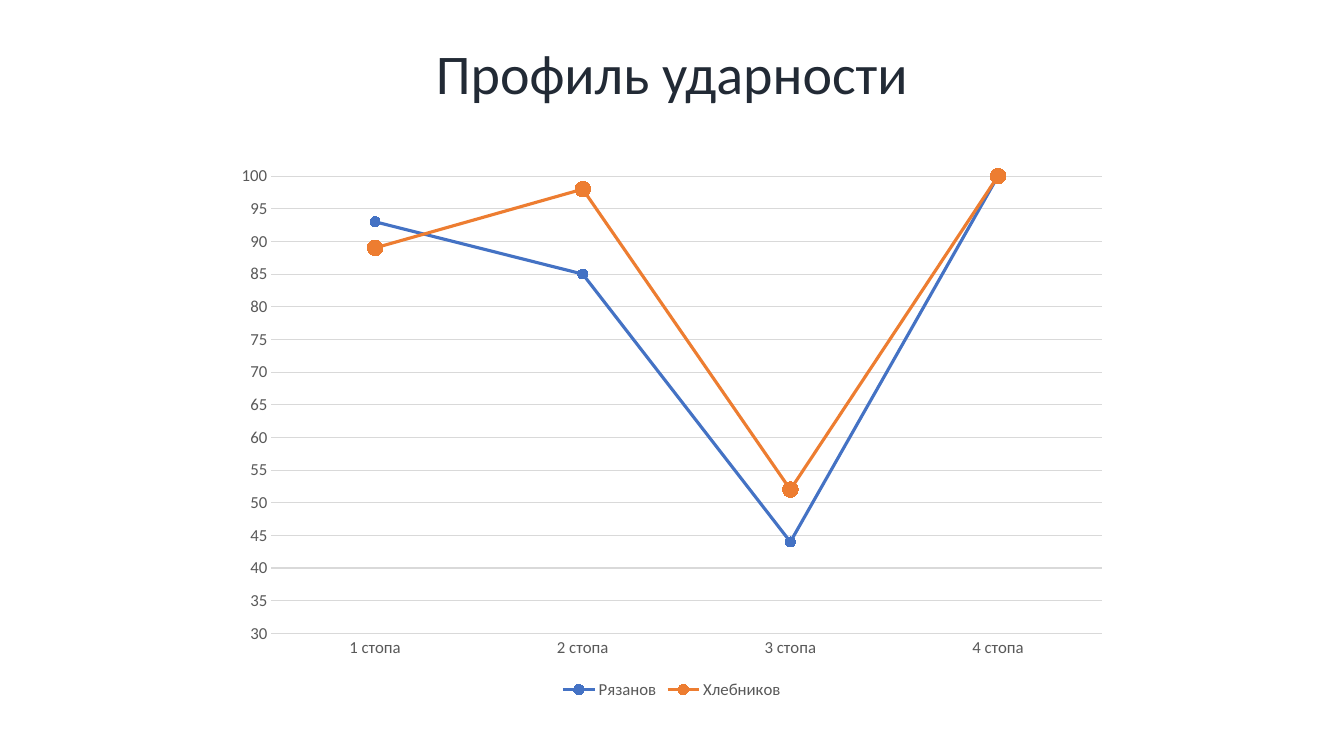
from pptx import Presentation
from pptx.chart.data import CategoryChartData
from pptx.dml.color import RGBColor
from pptx.enum import chart as kinds, text
from pptx.util import Cm, Pt

FONT = "Calibri"
COLORS = {
    "title": "222A35",
    "label": "595959",
    "grid": "D9D9D9",
    "Рязанов": "4472C4",
    "Хлебников": "ED7D31",
}
FEET = ["1 стопа", "2 стопа", "3 стопа", "4 стопа"]
# Poet: stress percentages by foot, marker size
PROFILES = {
    "Рязанов": ([93, 85, 44, 100], 7),
    "Хлебников": ([89, 98, 52, 100], 11),
}


def color(name):
    return RGBColor.from_string(COLORS[name])


def format_font(font, size, name):
    font.name = FONT
    font.size = Pt(size)
    font.bold = False
    font.color.rgb = color(name)


def format_line(line, name, width):
    line.color.rgb = color(name)
    line.width = Pt(width)


def set_title(page, wording, left, top, width, height, size=40):
    box = page.shapes.title
    box.left, box.top, box.width, box.height = left, top, width, height
    frame = box.text_frame
    frame.word_wrap = False
    frame.auto_size = text.MSO_AUTO_SIZE.SHAPE_TO_FIT_TEXT
    frame.vertical_anchor = text.MSO_ANCHOR.TOP
    para = frame.paragraphs[0]
    para.alignment = text.PP_ALIGN.CENTER
    span = para.add_run()
    span.text = wording
    format_font(span.font, size, "title")


def format_axes(chart):
    feet, percent = chart.category_axis, chart.value_axis
    for axis in (feet, percent):
        axis.major_tick_mark = kinds.XL_TICK_MARK.NONE
        axis.minor_tick_mark = kinds.XL_TICK_MARK.NONE
        format_font(axis.tick_labels.font, 12, "label")
    format_line(feet.format.line, "grid", 0.75)

    percent.minimum_scale, percent.maximum_scale = 30, 100
    percent.major_unit = 5
    percent.format.line.fill.background()
    percent.has_major_gridlines = True
    format_line(percent.major_gridlines.format.line, "grid", 0.75)


def format_series(series, marker_size):
    series.smooth = False
    format_line(series.format.line, series.name, 2.25)
    marker = series.marker
    marker.style = kinds.XL_MARKER_STYLE.CIRCLE
    marker.size = marker_size
    marker.format.fill.solid()
    marker.format.fill.fore_color.rgb = color(series.name)
    format_line(marker.format.line, series.name, 0.75)


def add_profile_chart(page, left, top, width, height):
    data = CategoryChartData()
    data.categories = FEET
    for poet, (values, _) in PROFILES.items():
        data.add_series(poet, values)
    chart = page.shapes.add_chart(
        kinds.XL_CHART_TYPE.LINE_MARKERS, left, top, width, height, data
    ).chart
    chart.has_title = False
    format_font(chart.font, 12, "label")
    chart.plots[0].vary_by_categories = False
    format_axes(chart)
    for series in chart.plots[0].series:
        format_series(series, PROFILES[series.name][1])

    # Legend under the plot
    chart.has_legend = True
    chart.legend.position = kinds.XL_LEGEND_POSITION.BOTTOM
    chart.legend.include_in_layout = False
    format_font(chart.legend.font, 12, "label")


def main():
    deck = Presentation()
    deck.slide_width, deck.slide_height = Cm(33.87), Cm(19.05)
    page = deck.slides.add_slide(deck.slide_layouts.get_by_name("Title Only"))

    # Heading
    set_title(page, "Профиль ударности", Cm(10.67), Cm(0.84), Cm(12.52), Cm(1.96))

    # Stress profile by foot
    add_profile_chart(page, Cm(5.64), Cm(3.91), Cm(22.58), Cm(13.82))

    deck.save("out.pptx")


if __name__ == "__main__":
    main()
